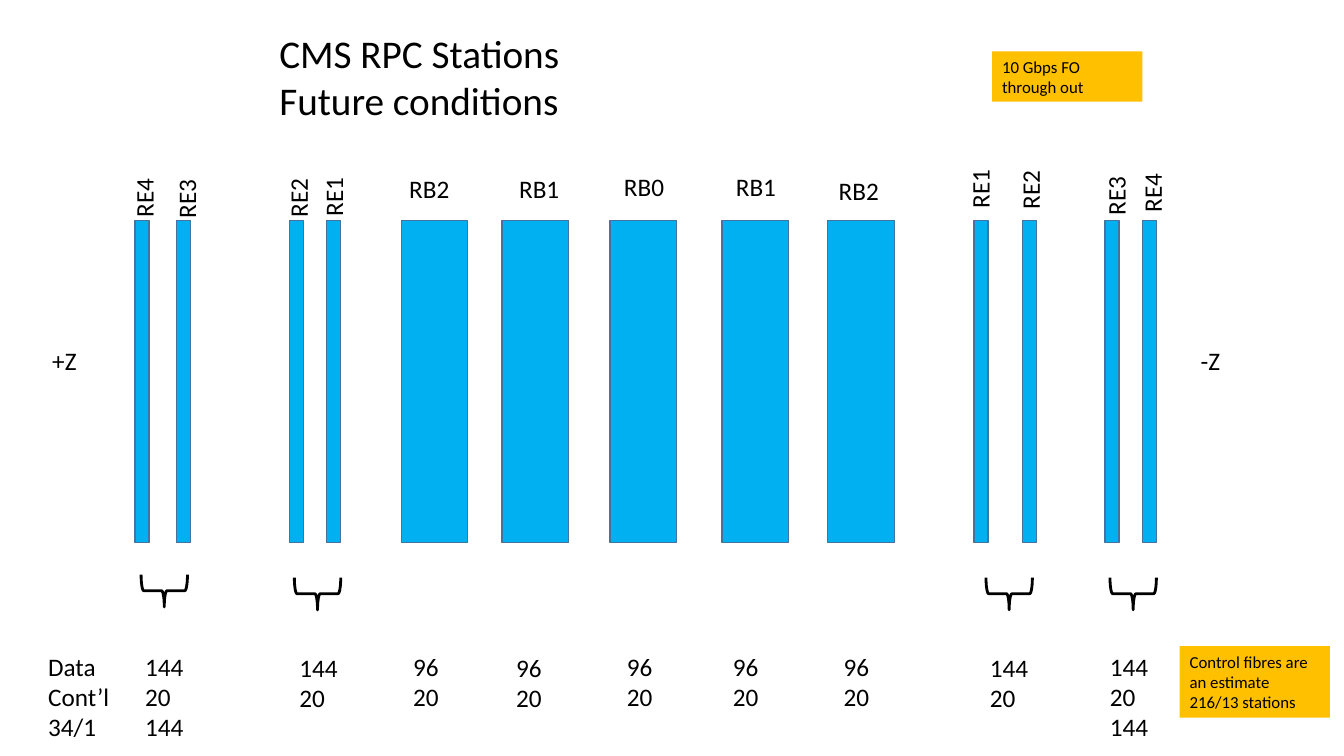
from pptx import Presentation
from pptx.dml.color import RGBColor
from pptx.enum.shapes import MSO_SHAPE
from pptx.enum.text import MSO_ANCHOR, PP_ALIGN
from pptx.util import Inches, Pt

RECT, BRACE = MSO_SHAPE.RECTANGLE, MSO_SHAPE.LEFT_BRACE
TOP, MIDDLE, LEFT = MSO_ANCHOR.TOP, MSO_ANCHOR.MIDDLE, PP_ALIGN.LEFT

BLACK = RGBColor(0x00, 0x00, 0x00)
BLUE = RGBColor(0x00, 0xB0, 0xF0)
EDGE = RGBColor(0x43, 0x73, 0x9E)
AMBER = RGBColor(0xFF, 0xC0, 0x00)

LABEL_W, LINE_H = 0.65, 0.4
ENDCAP_W, BARREL_W = 0.14, 0.66

# Station name, bar left, label offset from the bar's top left corner
ENDCAPS = [
    ("RE4", 1.34, -0.24, -0.46), ("RE3", 1.75, -0.23, -0.45),
    ("RE2", 2.87, -0.24, -0.46), ("RE1", 3.24, -0.26, -0.47),
    ("RE1", 9.66, -0.27, -0.55), ("RE2", 10.14, -0.25, -0.54),
    ("RE3", 10.96, -0.22, -0.48), ("RE4", 11.33, -0.23, -0.51),
]
BARRELS = [
    ("RB2", 3.98, -0.02, -0.52), ("RB1", 4.98, 0.07, -0.52),
    ("RB0", 6.05, 0.04, -0.54), ("RB1", 7.16, 0.04, -0.54),
    ("RB2", 8.21, 0.01, -0.5),
]
# Left and top of each brace before it is turned
BRACES = [(1.47, 5.63), (2.99, 5.66), (9.85, 5.66), (11.08, 5.66)]
# Left, offset from the row's top, lines
COUNTS = [
    (0.38, 0, ["Data", "Cont’l", "34/1"]),
    (1.34, 0, ["144", "20", "144"]),
    (2.87, 0.01, ["144", "20"]),
    (4.0, 0, ["96", "20"]),
    (5.02, 0.01, ["96", "20"]),
    (6.12, 0, ["96", "20"]),
    (7.17, 0, ["96", "20"]),
    (8.27, 0, ["96", "20"]),
    (9.72, 0.01, ["144", "20"]),
    (10.91, 0, ["144", "20", "144"]),
]


def write(tf, lines, size, anchor=TOP):
    tf.word_wrap = True
    tf.vertical_anchor = anchor
    look = {"name": "Calibri", "size": Pt(size), "bold": False}
    for i, line in enumerate(lines):
        p = tf.paragraphs[0] if i == 0 else tf.add_paragraph()
        p.alignment = LEFT
        r = p.add_run()
        r.text = line
        for key, value in look.items():
            setattr(r.font, key, value)
        r.font.color.rgb = BLACK


def add_text(s, box, lines, turn=0):
    sp = s.shapes.add_textbox(*map(Inches, box))
    sp.rotation = turn
    write(sp.text_frame, lines, 18)


def add_plain(s, kind, box, fill=None, line=None, width=1):
    sp = s.shapes.add_shape(kind, *map(Inches, box))
    sp.shadow.inherit = False
    if fill is None:
        sp.fill.background()
    else:
        sp.fill.solid()
        sp.fill.fore_color.rgb = fill
    if line is None:
        sp.line.fill.background()
    else:
        sp.line.color.rgb = line
        sp.line.width = Pt(width)
    return sp


def add_title(s, box, lines):
    sp = s.shapes.title
    for key, value in zip(("left", "top", "width", "height"), box):
        setattr(sp, key, Inches(value))
    write(sp.text_frame, lines, 28)


def add_stations(s, stations, bar_w, top, height, turn):
    for name, x, dx, dy in stations:
        add_plain(s, RECT, (x, top, bar_w, height), BLUE, EDGE)
        add_text(s, (x + dx, top + dy, LABEL_W, LINE_H), [name], turn)


def add_braces(s, width, height):
    for x, y in BRACES:
        add_plain(s, BRACE, (x, y, width, height), None, BLACK, 2).rotation = 270


def add_counts(s, top):
    for x, dy, lines in COUNTS:
        width = 0.84 if x < 1 else 0.64
        add_text(s, (x, top + dy, width, 0.1 + 0.3 * len(lines)), lines)


def add_note(s, box, text):
    sp = add_plain(s, RECT, box, AMBER)
    write(sp.text_frame, [text], 12, MIDDLE)


def main():
    prs = Presentation()
    prs.slide_width, prs.slide_height = Inches(13.33), Inches(7.5)
    s = prs.slides.add_slide(prs.slide_layouts[5])

    add_title(s, (2.67, 0.24, 3.27, 1.04), ["CMS RPC Stations", "Future conditions"])

    # Detector stations along the beam axis
    add_stations(s, ENDCAPS, ENDCAP_W, 2.19, 3.19, 270)
    add_stations(s, BARRELS, BARREL_W, 2.19, 3.19, 0)
    for x, side in ((0.42, "+Z"), (11.81, "-Z")):
        add_text(s, (x, 3.38, 0.47, LINE_H), [side])

    # Fibre counts under the stations
    add_braces(s, 0.32, 0.46)
    add_counts(s, 6.41)

    # Highlighted notes
    add_note(s, (11.7, 6.41, 1.49, 0.71),
             "Control fibres are an estimate 216/13 stations")
    add_note(s, (9.84, 0.51, 1.49, 0.5), "10 Gbps FO through out")

    prs.save("out.pptx")


if __name__ == "__main__":
    main()
